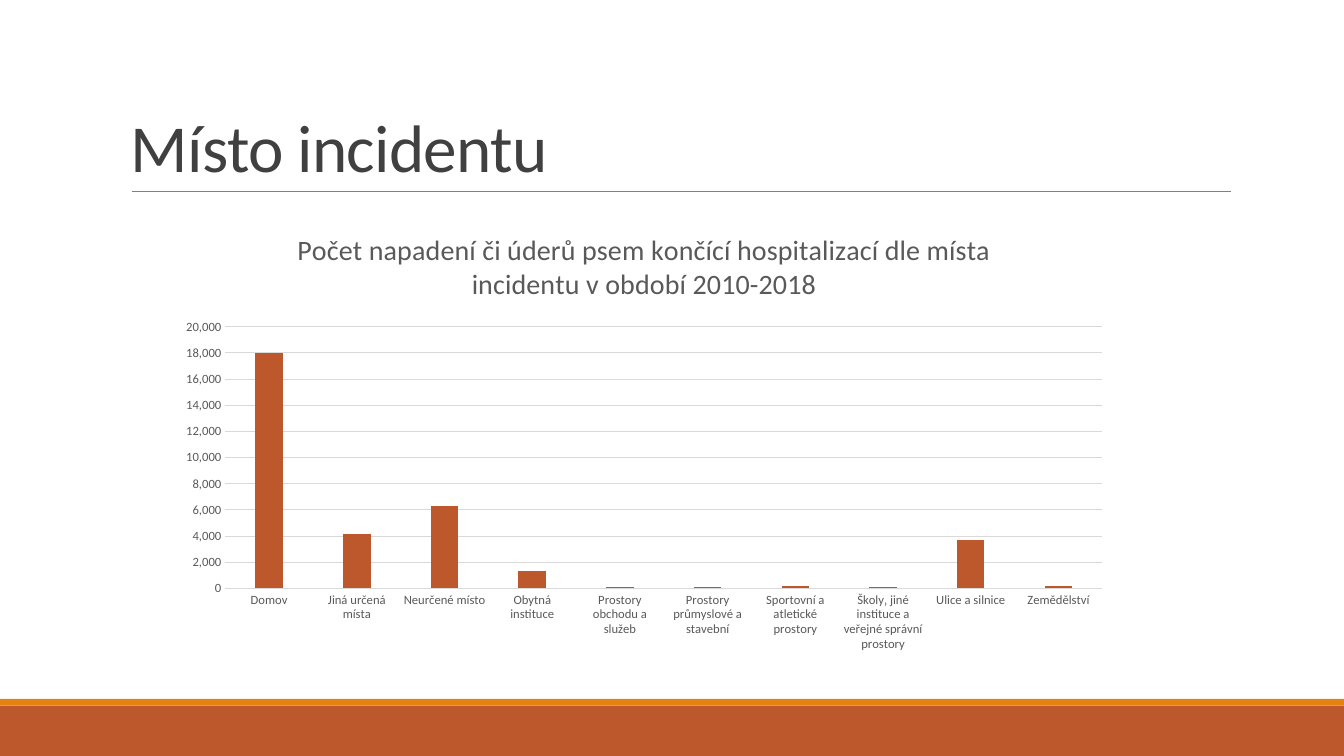
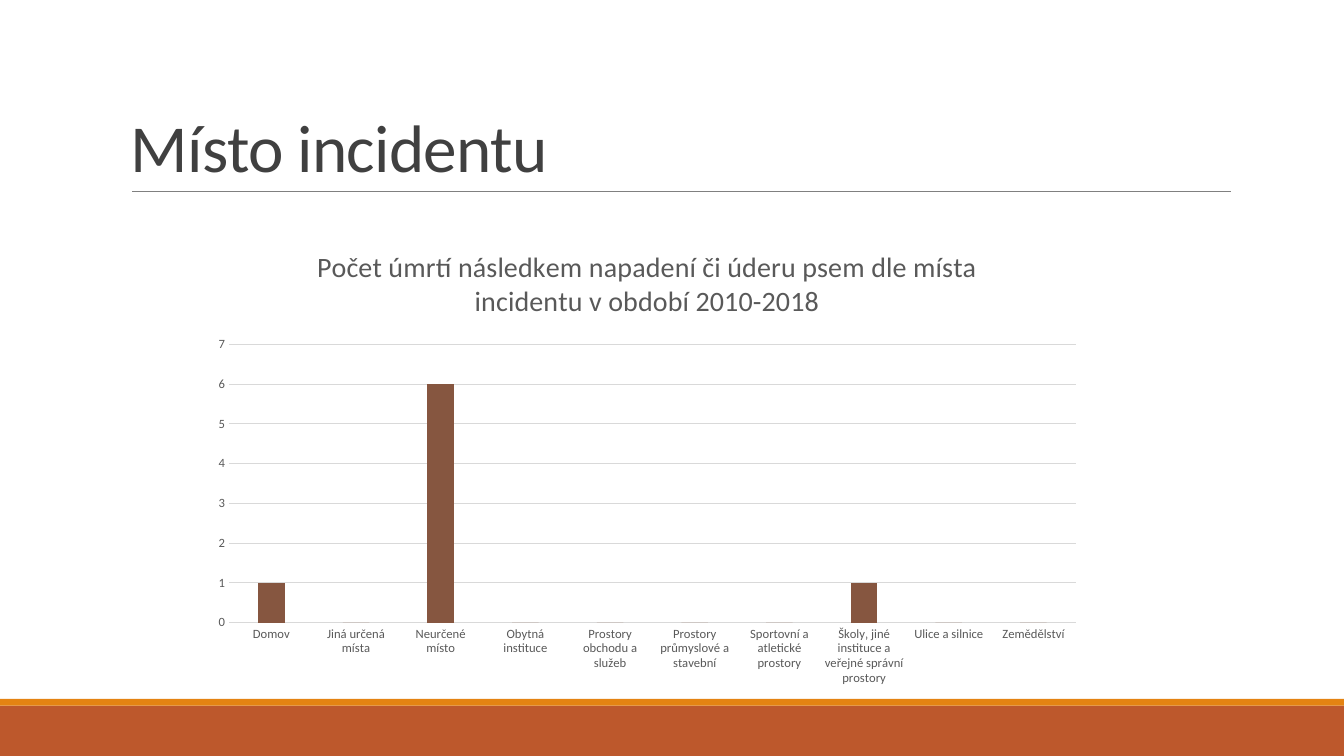
from lxml.etree import SubElement
from pptx import Presentation
from pptx.chart.data import CategoryChartData
from pptx.dml.color import RGBColor
from pptx.enum.chart import XL_CHART_TYPE, XL_TICK_MARK
from pptx.enum.shapes import MSO_CONNECTOR, MSO_SHAPE
from pptx.enum.text import MSO_ANCHOR
from pptx.oxml.ns import qn
from pptx.util import Inches, Pt

# Shared style
RUST = RGBColor(0xBD, 0x58, 0x2C)
ORANGE = RGBColor(0xE4, 0x83, 0x12)
BROWN = RGBColor(0x86, 0x56, 0x40)
TITLE_GRAY = RGBColor(0x40, 0x40, 0x40)
LABEL_GRAY = RGBColor(0x59, 0x59, 0x59)
RULE_GRAY = RGBColor(0x80, 0x80, 0x80)
GRID_GRAY = RGBColor(0xD9, 0xD9, 0xD9)
FONT = "Calibri"

# The slide is a grid of square cells
COLUMNS, ROWS = 160, 90
CELL = Inches(7.5) / ROWS

# Content
PLACES = [
    "Domov",
    "Jiná určená místa",
    "Neurčené místo",
    "Obytná instituce",
    "Prostory obchodu a služeb",
    "Prostory průmyslové a stavební",
    "Sportovní a atletické prostory",
    "Školy‚ jiné instituce a veřejné správní prostory",
    "Ulice a silnice",
    "Zemědělství",
]
HOSPITALIZED = [18000, 4200, 6300, 1300, 100, 100, 200, 100, 3700, 200]
DEATHS = [1, 0, 6, 0, 0, 0, 0, 1, 0, 0]


def cells(*counts):
    """Turn counts of grid cells into lengths."""
    return [round(count * CELL) for count in counts]


def format_font(font, size, color):
    font.name = FONT
    font.size = Pt(size)
    font.bold = False
    font.color.rgb = color


def write_text(frame, text, size, color, line_spacing=None, tracking=None):
    """Fill the first paragraph of a text frame with one formatted span."""
    para = frame.paragraphs[0]
    para.line_spacing = line_spacing
    span = para.add_run()
    span.text = text
    format_font(span.font, size, color)
    if tracking is not None:
        span.font._element.set("spc", str(round(tracking * 100)))


class SlideBuilder:
    def __init__(self, deck):
        self.deck = deck
        self.page = None

    def start_page(self, title):
        self.page = self.deck.slides.add_slide(self.deck.slide_layouts[6])
        self.band(84, 6, RUST)
        self.band(83.2, 0.8, ORANGE)
        self.rule(15.75, 146.5, 22.8)
        self.title(title)

    def band(self, row, height, color):
        band = self.page.shapes.add_shape(
            MSO_SHAPE.RECTANGLE, *cells(0, row, COLUMNS, height))
        band.shadow.inherit = False
        band.fill.solid()
        band.fill.fore_color.rgb = color
        band.line.fill.background()

    def rule(self, start, end, row):
        rule = self.page.shapes.add_connector(
            MSO_CONNECTOR.STRAIGHT, *cells(start, row, end, row))
        rule.line.color.rgb = RULE_GRAY
        rule.line.width = Pt(0.5)
        SubElement(rule._element.spPr, qn("a:effectLst"))

    def title(self, text):
        box = self.page.shapes.add_textbox(*cells(14.4, 3.7, 132, 19.1))
        frame = box.text_frame
        frame.word_wrap = True
        frame.vertical_anchor = MSO_ANCHOR.BOTTOM
        write_text(frame, text, size=48, color=TITLE_GRAY,
                   line_spacing=0.85, tracking=-0.5)

    def column_chart(self, area, heading, values, color):
        data = CategoryChartData(number_format="#,##0")
        data.categories = PLACES
        data.add_series("Počet", values)
        chart = self.page.shapes.add_chart(
            XL_CHART_TYPE.COLUMN_CLUSTERED, *cells(*area), data).chart
        chart.has_legend = False
        format_font(chart.font, 10, LABEL_GRAY)

        # Heading
        chart.has_title = True
        chart.chart_title.include_in_layout = False
        write_text(chart.chart_title.text_frame, heading,
                   size=20, color=LABEL_GRAY)

        # Columns
        plot = chart.plots[0]
        plot.gap_width = 219
        plot.overlap = -27
        plot.vary_by_categories = False
        fill = plot.series[0].format.fill
        fill.solid()
        fill.fore_color.rgb = color

        # Axes
        for axis in (chart.category_axis, chart.value_axis):
            axis.major_tick_mark = XL_TICK_MARK.NONE
            axis.minor_tick_mark = XL_TICK_MARK.NONE
            format_font(axis.tick_labels.font, 9, LABEL_GRAY)
        chart.value_axis.format.line.fill.background()
        chart.value_axis.tick_labels.number_format = "#,##0"
        chart.value_axis.tick_labels.number_format_is_linked = False
        gridlines = chart.value_axis.major_gridlines
        for line in (chart.category_axis.format.line, gridlines.format.line):
            line.color.rgb = GRID_GRAY
            line.width = Pt(0.75)


def main():
    deck = Presentation()
    deck.slide_width, deck.slide_height = cells(COLUMNS, ROWS)
    builder = SlideBuilder(deck)

    # Hospital stays
    builder.start_page("Místo incidentu")
    builder.column_chart(
        (19.9, 25, 113.6, 53.6),
        "Počet napadení či úderů psem končící hospitalizací dle místa "
        "incidentu v období 2010-2018",
        HOSPITALIZED, RUST)

    # Deaths
    builder.start_page("Místo incidentu")
    builder.column_chart(
        (23.9, 27, 106.3, 55.7),
        "Počet úmrtí následkem napadení či úderu psem dle místa "
        "incidentu v období 2010-2018",
        DEATHS, BROWN)

    deck.save("out.pptx")


if __name__ == "__main__":
    main()
